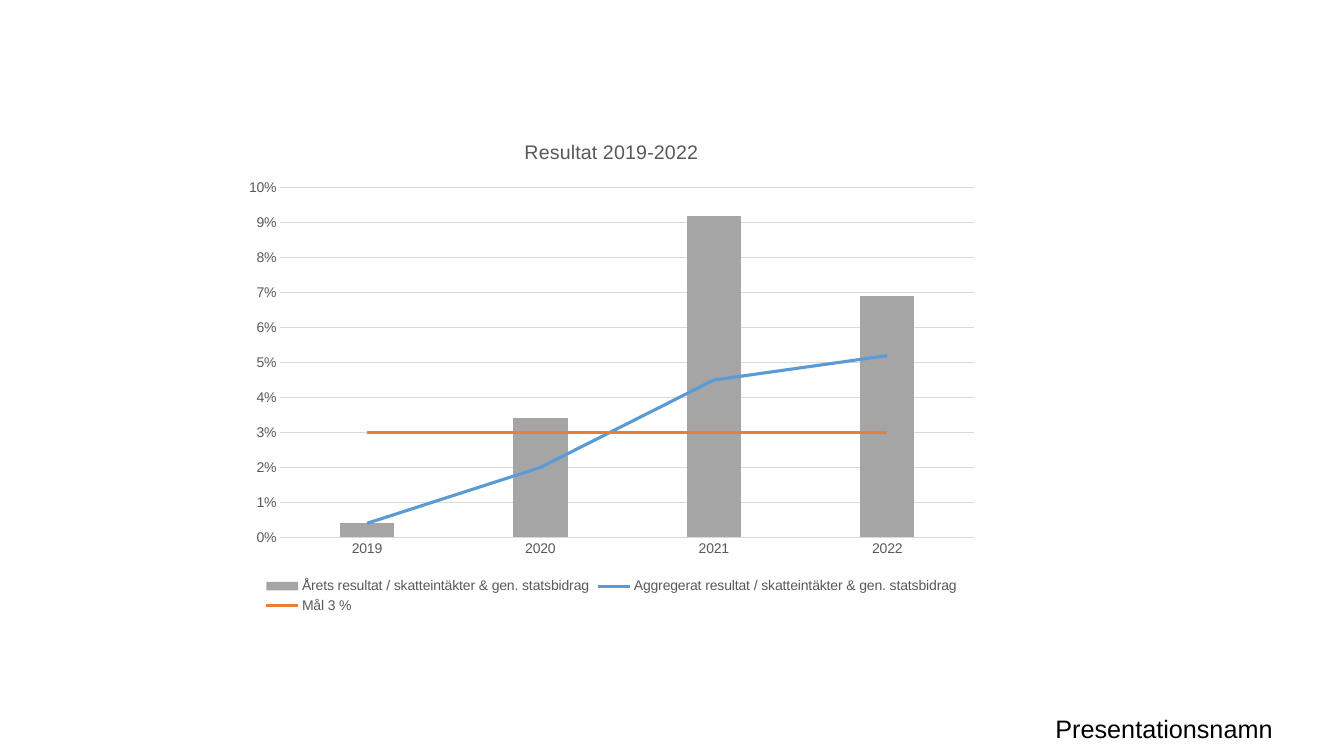
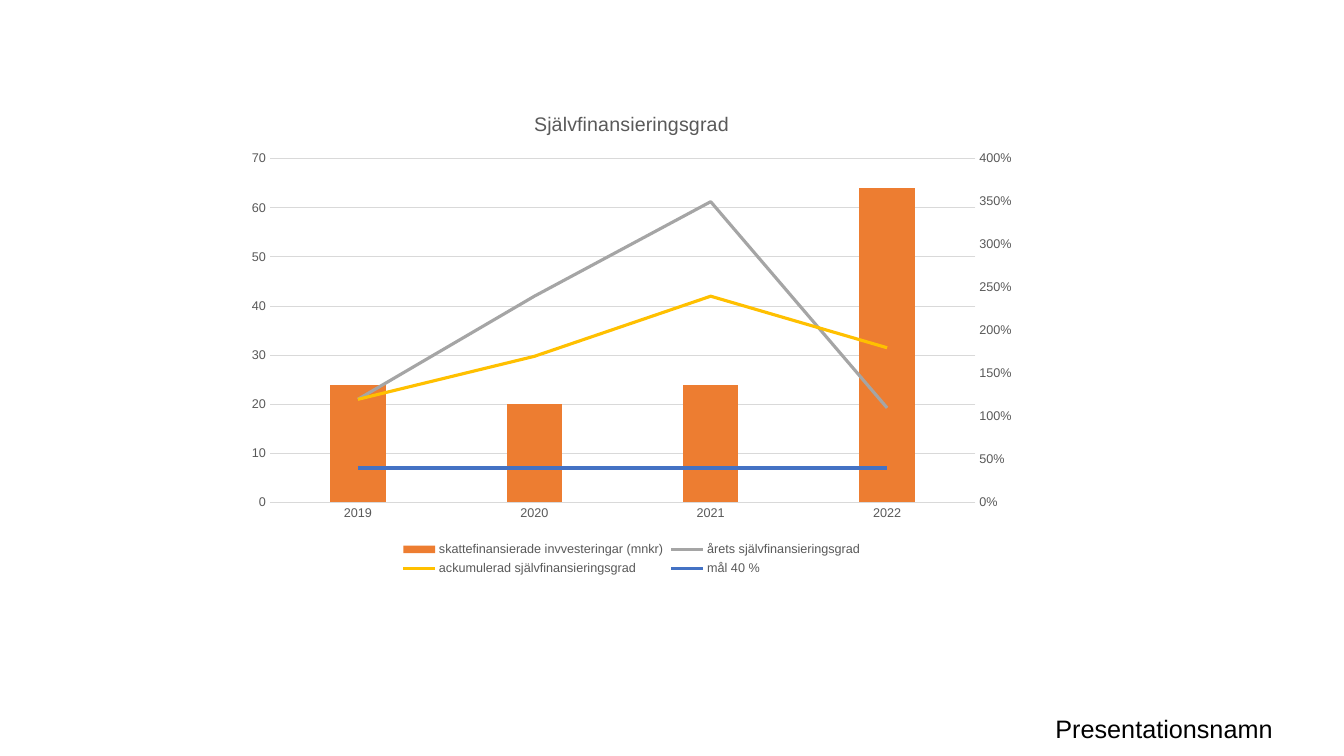
from copy import deepcopy
from dataclasses import dataclass

from pptx import Presentation
from pptx.chart.data import CategoryChartData as Data
from pptx.dml.color import RGBColor as Rgb
from pptx.enum.chart import XL_CHART_TYPE as Kind
from pptx.enum.chart import XL_LEGEND_POSITION as Place
from pptx.enum.chart import XL_MARKER_STYLE as Mark
from pptx.enum.chart import XL_TICK_MARK as Tick
from pptx.enum.text import MSO_ANCHOR as Anchor
from pptx.oxml import parse_xml
from pptx.oxml.ns import nsdecls, qn
from pptx.util import Inches, Pt


@dataclass(frozen=True)
class Theme:
    font: str = "Arial"
    black: str = "000000"
    label: str = "595959"
    rule: str = "D9D9D9"
    gray: str = "A5A5A5"
    sky: str = "5B9BD5"
    blue: str = "4472C4"
    orange: str = "ED7D31"
    gold: str = "FFC000"
    footer: float = 18
    title: float = 14
    body: float = 10
    small: float = 9
    thin: float = 0.75
    thick: float = 2.25


THEME = Theme()
YEARS = ["2019", "2020", "2021", "2022"]


def style(font, size, color):
    font.name = THEME.font
    font.size = Pt(size)
    font.bold = False
    font.color.rgb = Rgb.from_string(color)


def write(frame, text, size=THEME.body, color=THEME.black):
    run = frame.paragraphs[0].add_run()
    run.text = text
    style(run.font, size, color)


def stroke(line, color, width):
    line.color.rgb = Rgb.from_string(color)
    line.width = Pt(width)


class Deck:
    def __init__(self):
        self.file = Presentation()
        self.file.slide_width = Inches(13.33)
        self.file.slide_height = Inches(7.5)
        self.slide = None

    def page(self):
        self.slide = self.file.slides.add_slide(self.file.slide_layouts[6])
        self.footer("Presentationsnamn")

    def footer(self, text):
        box = self.slide.shapes.add_textbox(
            Inches(10.37), Inches(7.03), Inches(2.86), Inches(0.4))
        box.text_frame.word_wrap = True
        box.text_frame.vertical_anchor = Anchor.MIDDLE
        write(box.text_frame, text, size=THEME.footer)

    def chart(self, title, area, series, size, top, step, form, right=None):
        """Draw the first series as columns and the others as lines.

        series holds (name, color, values); right is (top, step, form).
        """
        data = Data()
        data.categories = YEARS
        for name, _, vals in series:
            data.add_series(name, vals)
        chart = self.slide.shapes.add_chart(
            Kind.COLUMN_CLUSTERED, *map(Inches, area), data).chart
        style(chart.font, THEME.body, THEME.black)

        # Title and legend
        chart.has_title = True
        write(chart.chart_title.text_frame, title,
              size=THEME.title, color=THEME.label)
        chart.chart_title.include_in_layout = False
        chart.has_legend = True
        chart.legend.position = Place.BOTTOM
        chart.legend.include_in_layout = False
        style(chart.legend.font, size, THEME.label)

        # Axes
        for axis in (chart.category_axis, chart.value_axis):
            axis.major_tick_mark = axis.minor_tick_mark = Tick.NONE
            style(axis.tick_labels.font, size, THEME.label)
        stroke(chart.category_axis.format.line, THEME.rule, THEME.thin)
        axis = chart.value_axis
        axis.format.line.fill.background()
        stroke(axis.major_gridlines.format.line, THEME.rule, THEME.thin)
        axis.minimum_scale, axis.maximum_scale = 0, top
        axis.major_unit = step
        axis.tick_labels.number_format = form
        axis.tick_labels.number_format_is_linked = False

        # Columns and lines
        self.split(chart, right)
        bars, lines = chart.plots
        bars.gap_width = 219
        bars.overlap = -27
        bars.vary_by_categories = False
        fill = bars.series[0].format.fill
        fill.solid()
        fill.fore_color.rgb = Rgb.from_string(series[0][1])
        for item, (_, color, _) in zip(lines.series, series[1:]):
            item.smooth = False
            item.marker.style = Mark.NONE
            stroke(item.format.line, color, THEME.thick)

    def split(self, chart, right):
        """Move all series but the first to a line plot."""
        area = chart.element.find(".//" + qn("c:plotArea"))
        bars = area.find(qn("c:barChart"))
        lines = parse_xml(
            f'<c:lineChart {nsdecls("c")}><c:grouping val="standard"/>'
            '<c:varyColors val="0"/></c:lineChart>')
        for item in bars.findall(qn("c:ser"))[1:]:
            for flag in item.findall(qn("c:invertIfNegative")):
                item.remove(flag)
            lines.append(item)
        for mark in bars.findall(qn("c:axId")):
            lines.append(deepcopy(mark))
        bars.addnext(lines)
        if right:
            self.second(area, lines, *right)

    def second(self, area, lines, top, step, form):
        """Give the lines a hidden category axis and a right value axis."""
        def put(node, tag, val, key="val"):
            node.find(".//" + qn(tag)).set(key, str(val))

        cat = deepcopy(area.find(qn("c:catAx")))
        val = deepcopy(area.find(qn("c:valAx")))
        keys = ("5001", "5002")
        for mark, key in zip(lines.findall(qn("c:axId")), keys):
            mark.set("val", key)
        for axis, own, other in ((cat, *keys), (val, *keys[::-1])):
            put(axis, "c:axId", own)
            put(axis, "c:crossAx", other)
        put(cat, "c:delete", 1)
        val.remove(val.find(qn("c:majorGridlines")))
        put(val, "c:axPos", "r")
        put(val, "c:crosses", "max")
        put(val, "c:max", top)
        put(val, "c:majorUnit", step)
        put(val, "c:numFmt", form, key="formatCode")
        last = area.find(qn("c:valAx"))
        last.addnext(val)
        val.addnext(cat)


def main():
    deck = Deck()

    # Result
    deck.page()
    deck.chart(
        "Resultat 2019-2022", (2.32, 1.2, 7.49, 4.93),
        [("Årets resultat / skatteintäkter & gen. statsbidrag",
          THEME.gray, [0.004, 0.034, 0.092, 0.069]),
         ("Aggregerat resultat / skatteintäkter & gen. statsbidrag",
          THEME.sky, [0.004, 0.02, 0.045, 0.052]),
         ("Mål 3 %", THEME.orange, [0.03] * 4)],
        size=THEME.body, top=0.1, step=0.01, form="0%")

    # Self-financing
    deck.page()
    deck.chart(
        "Självfinansieringsgrad", (2.34, 0.92, 7.85, 4.83),
        [("skattefinansierade invvesteringar (mnkr)",
          THEME.orange, [24, 20, 24, 64]),
         ("årets självfinansieringsgrad", THEME.gray, [1.2, 2.4, 3.5, 1.1]),
         ("ackumulerad självfinansieringsgrad",
          THEME.gold, [1.2, 1.7, 2.4, 1.8]),
         ("mål 40 %", THEME.blue, [0.4] * 4)],
        size=THEME.small, top=70, step=10, form="0", right=(4, 0.5, "0%"))

    deck.file.save("out.pptx")


if __name__ == "__main__":
    main()
